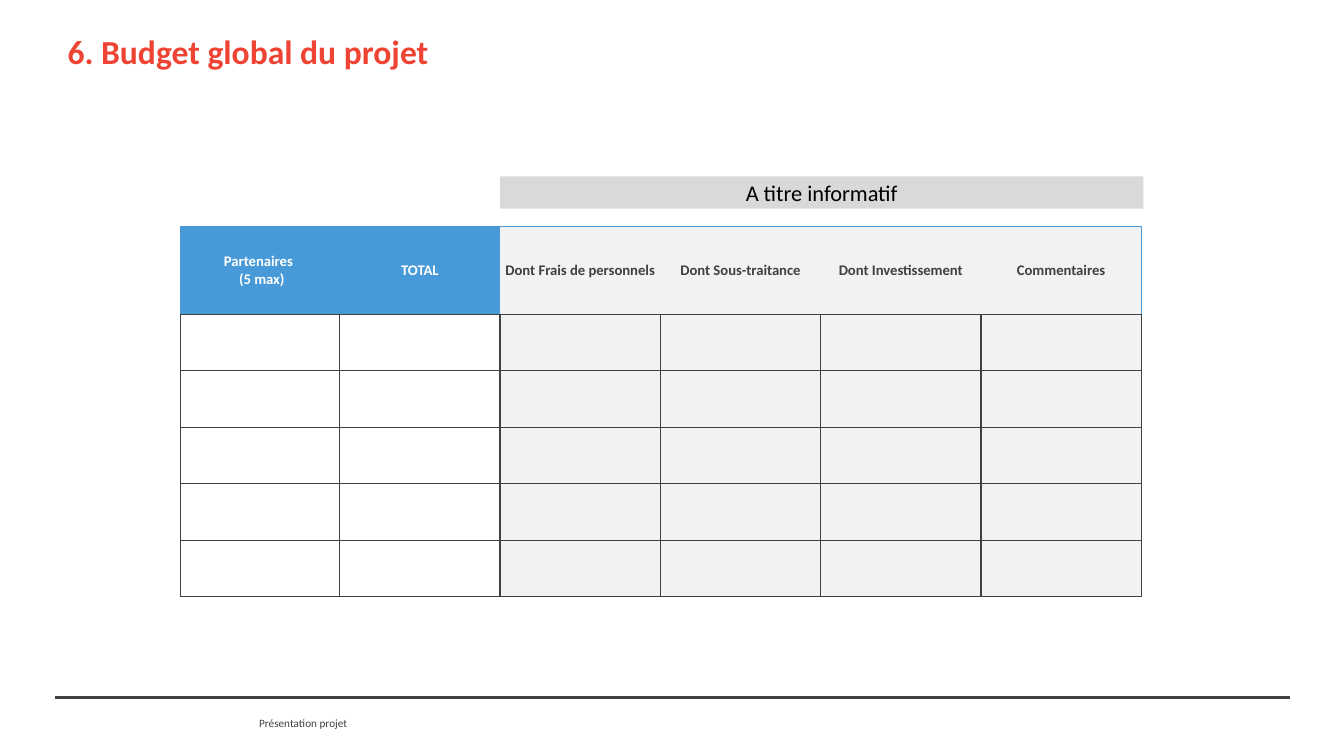
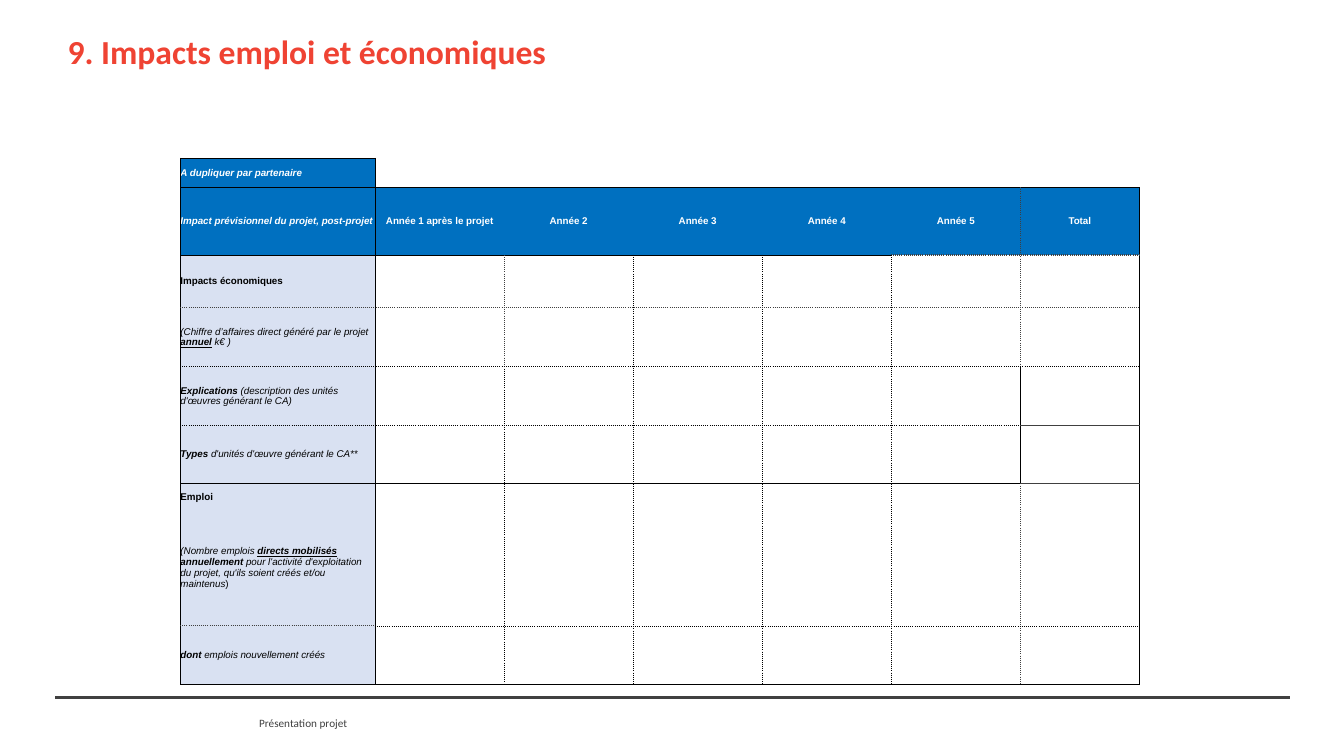
"""Builds the budget and impact slides of the project presentation."""
from dataclasses import dataclass
from typing import Callable, NamedTuple, Optional

import lxml.etree
import pptx
import pptx.dml.color
import pptx.enum.shapes
import pptx.enum.text
import pptx.oxml.ns
import pptx.util

EMU_PER_PX = 9144
RED, GREY, BLACK, WHITE = "EF4333", "404040", "000000", "FFFFFF"
SKY, NAVY, LAVENDER = "4799D7", "0070C0", "D9E1F2"
PALE, SILVER = "F2F2F2", "D9D9D9"
PLAIN_TABLE_STYLE = "{2D5ABB26-0587-4C30-8999-92F81FD0307C}"
MIDDLE = pptx.enum.text.MSO_ANCHOR.MIDDLE
CENTER = pptx.enum.text.PP_ALIGN.CENTER
LEFT = pptx.enum.text.PP_ALIGN.LEFT


class Pen(NamedTuple):
    colour: str
    points: float
    dash: str = "solid"


class Span(NamedTuple):
    text: str
    bold: bool = False
    italic: bool = False
    underline: bool = False


class Label(NamedTuple):
    spans: list[Span]
    colour: str = BLACK
    align: pptx.enum.text.PP_ALIGN = LEFT


Edge = Callable[[int, int], Optional[Pen]]


@dataclass
class Grid:
    left: int
    top: int
    columns: list[int]
    rows: list[int]
    font: str
    size: float
    labels: dict[tuple[int, int], Label]
    fill: Callable[[int, int], Optional[str]]
    edge_above: Edge
    edge_before: Edge
    merges: list[tuple[int, int, int, int]]


SOLID = Pen(BLACK, 0.5)
DOTTED = Pen(BLACK, 0.5, "dot")
GREY_SOLID = Pen(GREY, 1)
GREY_DOTTED = Pen(GREY, 1, "dot")
GREY_FINE = Pen(GREY, 1, "sysDot")
SKY_SOLID = Pen(SKY, 0.75)


def px(length: int) -> pptx.util.Emu:
    return pptx.util.Emu(length * EMU_PER_PX)


def rgb(colour: str) -> pptx.dml.color.RGBColor:
    return pptx.dml.color.RGBColor.from_string(colour)


def tag(name: str) -> str:
    return pptx.oxml.ns.qn(f"a:{name}")


def set_font(font, name: str, size: float, colour: str) -> None:
    font.name = name
    font.size = pptx.util.Pt(size)
    font.color.rgb = rgb(colour)


def set_margins(target, horizontal: int, vertical: int) -> None:
    target.margin_left = target.margin_right = px(horizontal)
    target.margin_top = target.margin_bottom = px(vertical)


def set_border(cell, side: str, pen: Optional[Pen]) -> None:
    line = lxml.etree.SubElement(cell._tc.get_or_add_tcPr(), tag(f"ln{side}"))
    if pen is None:
        lxml.etree.SubElement(line, tag("noFill"))
        return
    line.set("w", str(int(pptx.util.Pt(pen.points))))
    paint = lxml.etree.SubElement(line, tag("solidFill"))
    lxml.etree.SubElement(paint, tag("srgbClr")).set("val", pen.colour)
    lxml.etree.SubElement(line, tag("prstDash")).set("val", pen.dash)


def write_label(cell, label: Label, font: str, size: float) -> None:
    para = cell.text_frame.paragraphs[0]
    para.alignment = label.align
    set_font(para.font, font, size, label.colour)
    if len(label.spans) == 1:
        span = label.spans[0]
        para.text = span.text
        para.font.bold, para.font.italic = span.bold, span.italic
        return
    for span in label.spans:
        run = para.add_run()
        run.text = span.text
        run.font.bold, run.font.italic = span.bold, span.italic
        run.font.underline = span.underline


def add_grid(page, grid: Grid) -> None:
    frame = page.shapes.add_table(
        len(grid.rows), len(grid.columns), px(grid.left), px(grid.top),
        px(sum(grid.columns)), px(sum(grid.rows)))
    table = frame.table
    table.first_row = table.horz_banding = False
    table._tbl.tblPr.find(tag("tableStyleId")).text = PLAIN_TABLE_STYLE
    for column, width in zip(table.columns, grid.columns):
        column.width = px(width)
    for row, height in zip(table.rows, grid.rows):
        row.height = px(height)
    for top, left, bottom, right in grid.merges:
        table.cell(top, left).merge(table.cell(bottom, right))
    for r in range(len(grid.rows)):
        for c in range(len(grid.columns)):
            cell = table.cell(r, c)
            height = cell.span_height if cell.is_merge_origin else 1
            set_margins(cell, 0, 0)
            cell.vertical_anchor = MIDDLE
            set_border(cell, "L", grid.edge_before(r, c))
            set_border(cell, "R", grid.edge_before(r, c + 1))
            set_border(cell, "T", grid.edge_above(r, c))
            set_border(cell, "B", grid.edge_above(r + height, c))
            colour = grid.fill(r, c)
            if colour:
                cell.fill.solid()
                cell.fill.fore_color.rgb = rgb(colour)
            else:
                cell.fill.background()
            label = grid.labels.get((r, c), Label([Span("")]))
            write_label(cell, label, grid.font, grid.size)


def add_page(deck, title: str):
    page = deck.slides.add_slide(deck.slide_layouts[5])
    box = page.shapes.title
    box.left, box.top, box.width, box.height = px(67), px(30), px(1200), px(84)
    frame = box.text_frame
    set_margins(frame, 0, 5)
    frame.vertical_anchor = pptx.enum.text.MSO_ANCHOR.TOP
    frame.auto_size = pptx.enum.text.MSO_AUTO_SIZE.NONE
    para = frame.paragraphs[0]
    para.text = title
    para.alignment = LEFT
    para.line_spacing = 0.9
    set_font(para.font, "Calibri", 24, RED)
    para.font.bold = True

    footer = page.shapes.add_textbox(px(257), px(711), px(88), px(13)).text_frame
    set_margins(footer, 0, 0)
    footer.word_wrap = False
    footer.auto_size = pptx.enum.text.MSO_AUTO_SIZE.SHAPE_TO_FIT_TEXT
    footer.paragraphs[0].text = "Présentation projet"
    set_font(footer.paragraphs[0].font, "Calibri", 8, GREY)

    rule = page.shapes.add_connector(
        pptx.enum.shapes.MSO_CONNECTOR.STRAIGHT, px(55), px(692), px(1279), px(692))
    rule.line.color.rgb = rgb(GREY)
    rule.line.width = pptx.util.Pt(1.5)
    lxml.etree.SubElement(rule._element.spPr, tag("effectLst"))
    return page


def add_banner(page, text: str) -> None:
    banner = page.shapes.add_shape(
        pptx.enum.shapes.MSO_SHAPE.RECTANGLE, px(496), px(175), px(638), px(32))
    banner.shadow.inherit = False
    banner.fill.solid()
    banner.fill.fore_color.rgb = rgb(SILVER)
    banner.line.fill.background()
    banner.text_frame.vertical_anchor = MIDDLE
    para = banner.text_frame.paragraphs[0]
    para.text = text
    para.alignment = CENTER
    set_font(para.font, "Calibri", 16, BLACK)


def budget_fill(row: int, column: int) -> Optional[str]:
    if column > 1:
        return PALE
    return SKY if row == 0 else None


def budget_above(row: int, column: int) -> Optional[Pen]:
    return SKY_SOLID if row == 0 else GREY_SOLID


def budget_before(row: int, column: int) -> Optional[Pen]:
    if row > 0:
        return GREY_SOLID
    return SKY_SOLID if column in (0, 6) else None


def impact_fill(row: int, column: int) -> Optional[str]:
    if column == 7 or (row == 0 and column > 0):
        return None
    if row < 2:
        return NAVY
    return LAVENDER if column == 0 else WHITE


def impact_above(row: int, column: int) -> Optional[Pen]:
    if column == 7 or row == 7 or (row == 0 and column > 0):
        return None
    if row == 2 and column > 4:
        return GREY_FINE
    if row in (5, 6) and column == 6:
        return GREY_SOLID
    if row == 3 or (row == 8 and column == 0):
        return GREY_DOTTED
    return DOTTED if row in (4, 5, 8) else SOLID


def impact_before(row: int, column: int) -> Optional[Pen]:
    if column < 2:
        return SOLID
    if column == 8 or row == 0:
        return None
    if column == 7:
        return SOLID
    if column == 6:
        return SOLID if row in (4, 5) else GREY_DOTTED
    if row == 1:
        return None
    return GREY_DOTTED if column == 2 and row in (2, 3) else DOTTED


def budget_grid() -> Grid:
    headings = ["Partenaires \v (5 max)", "TOTAL", "Dont Frais de personnels",
                "Dont Sous-traitance", "Dont Investissement", "Commentaires"]
    labels = {(0, c): Label([Span(text, bold=True)], WHITE if c < 2 else GREY, CENTER)
              for c, text in enumerate(headings)}
    return Grid(179, 225, [158] + [159] * 5, [87] + [56] * 5, "Calibri", 10.5,
                labels, budget_fill, budget_above, budget_before, [])


def impact_grid() -> Grid:
    row_spans = [
        [Span("A dupliquer par partenaire", True, True)],
        [Span("Impact prévisionnel du projet, post-projet", True, True)],
        [Span("Impacts économiques", True)],
        [Span("(Chiffre d’affaires direct généré par le projet ", italic=True),
         Span("annuel", True, True, True), Span(" k€ )", italic=True)],
        [Span("Explications ", True, True),
         Span("(description des unités d'œuvres générant le CA)", italic=True)],
        [Span("Types ", True, True),
         Span("d'unités d'œuvre générant le CA**", italic=True)],
        [Span("Emploi", True)],
        [Span("(Nombre emplois ", italic=True),
         Span("directs mobilisés", True, True, True),
         Span(" annuellement ", True, True),
         Span("pour l'activité d'exploitation du projet, "
              "qu'ils soient créés et/ou maintenus", italic=True), Span(")")],
        [Span("dont ", True, True), Span("emplois nouvellement créés", italic=True)],
    ]
    headings = ["Année 1 après le projet", "Année 2", "Année 3", "Année 4",
                "Année 5", "Total"]
    labels = {(r, 0): Label(spans, WHITE if r < 2 else BLACK)
              for r, spans in enumerate(row_spans)}
    labels |= {(1, c): Label([Span(text, True)], WHITE, CENTER)
               for c, text in enumerate(headings, 1)}
    return Grid(179, 157, [193] + [128] * 5 + [118, 59],
                [29, 67, 52, 59, 58, 58, 26, 115, 58], "Arial", 7,
                labels, impact_fill, impact_above, impact_before,
                [(6, c, 7, c) for c in range(1, 7)])


def main() -> None:
    deck = pptx.Presentation()
    deck.slide_width, deck.slide_height = px(1333), px(750)
    budget = add_page(deck, "6. Budget global du projet")
    add_grid(budget, budget_grid())
    add_banner(budget, "A titre informatif")
    impact = add_page(deck, "9. Impacts emploi et économiques")
    add_grid(impact, impact_grid())
    deck.save("out.pptx")


if __name__ == "__main__":
    main()
